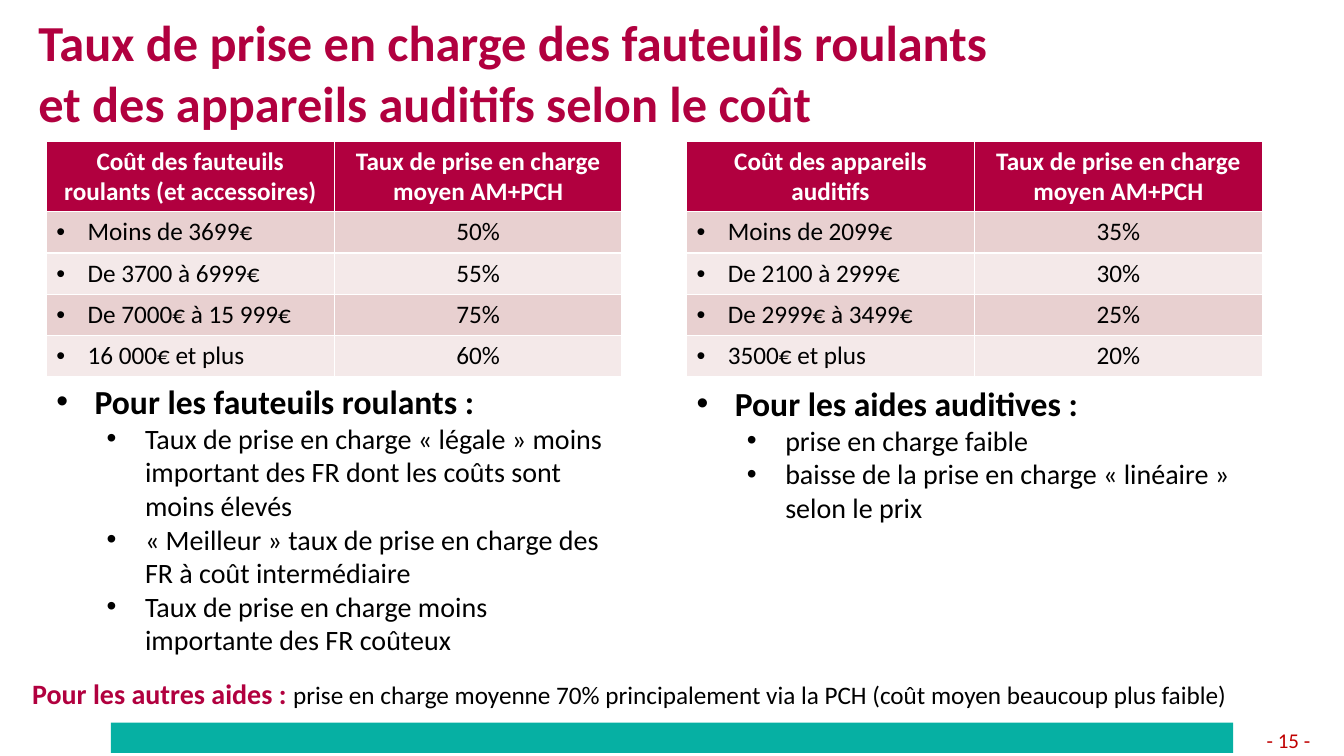
from lxml.etree import SubElement
from pptx import Presentation
from pptx.dml.color import RGBColor as RGB
from pptx.enum.shapes import MSO_SHAPE as SHAPE
from pptx.enum.text import MSO_ANCHOR as ANCHOR, MSO_AUTO_SIZE as AUTO, PP_ALIGN as ALIGN
from pptx.oxml.ns import qn
from pptx.util import Pt

PX = 9144
FONT = "Calibri"
COLORS = {
    "crimson": "B1003F", "teal": "06B0A3", "red": "C00000", "black": "000000",
    "white": "FFFFFF", "band_dark": "E8D0D0", "band_light": "F4E9E9",
}
RATE_HEADER = "Taux de prise en charge moyen AM+PCH"
COLUMNS = [
    {
        "x": 46, "notes_y": 373, "notes_h": 286,
        "rows": [("Coût des fauteuils roulants (et accessoires)", RATE_HEADER),
                 ("Moins de 3699€", "50%"), ("De 3700 à 6999€", "55%"),
                 ("De 7000€ à 15 999€", "75%"), ("16 000€ et plus", "60%")],
        "heading": "Pour les fauteuils roulants :",
        "notes": ["Taux de prise en charge « légale » moins important des FR "
                  "dont les coûts sont moins élevés",
                  "« Meilleur » taux de prise en charge des FR à coût intermédiaire",
                  "Taux de prise en charge moins importante des FR coûteux"],
    },
    {
        "x": 681, "notes_y": 375, "notes_h": 151,
        "rows": [("Coût des appareils auditifs", RATE_HEADER),
                 ("Moins de 2099€", "35%"), ("De 2100 à 2999€", "30%"),
                 ("De 2999€ à 3499€", "25%"), ("3500€ et plus", "20%")],
        "heading": "Pour les aides auditives :",
        "notes": ["prise en charge faible",
                  "baisse de la prise en charge « linéaire » selon le prix"],
    },
]


def emu(*lengths):
    """Convert px lengths to EMU."""
    return [n * PX for n in lengths]


def color(name):
    """Return a named colour."""
    return RGB.from_string(COLORS[name])


def add_run(p, text, size, ink="black", bold=False):
    """Add a formatted run to a paragraph."""
    r = p.add_run()
    r.text = text
    r.font.name, r.font.size, r.font.bold = FONT, Pt(size), bold
    r.font.color.rgb = color(ink)


def set_bullet(p, left, hang):
    """Give a paragraph a round bullet with a hanging indent."""
    pPr = p._p.get_or_add_pPr()
    pPr.set("marL", str(left * PX))
    pPr.set("indent", str(-hang * PX))
    SubElement(pPr, qn("a:buFont")).set("typeface", "Arial")
    SubElement(pPr, qn("a:buChar")).set("char", "•")


def add_text_box(s, x, y, w, h):
    """Add a wrapping text box and return its text frame."""
    tf = s.shapes.add_textbox(*emu(x, y, w, h)).text_frame
    tf.word_wrap = True
    return tf


def add_title(s, lines):
    """Place the title and fill it line by line."""
    title = s.shapes.title
    title.left, title.top, title.width, title.height = emu(28, 6, 1346, 131)
    tf = title.text_frame
    tf.auto_size, tf.vertical_anchor = AUTO.NONE, ANCHOR.MIDDLE
    p = tf.paragraphs[0]
    p.alignment = ALIGN.LEFT
    for i, line in enumerate(lines):
        if i:
            p.add_line_break()
        add_run(p, line, 36, "crimson", True)


def add_rate_table(s, x, rows):
    """Add a table of coverage rates by cost."""
    table = s.shapes.add_table(len(rows), 2, *emu(x, 140, 571, 234)).table
    for i, row in enumerate(rows):
        header = i == 0
        table.rows[i].height = (70 if header else 41) * PX
        fill = "crimson" if header else "band_dark" if i % 2 else "band_light"
        for j, text in enumerate(row):
            cell = table.cell(i, j)
            cell.fill.solid()
            cell.fill.fore_color.rgb = color(fill)
            p = cell.text_frame.paragraphs[0]
            if header or j:
                p.alignment = ALIGN.CENTER
            else:
                set_bullet(p, 31, 31)
            add_run(p, text, 18, "white" if header else "black", header)


def add_notes(s, x, y, h, heading, notes):
    """Add a bold bulleted heading with its sub-points."""
    tf = add_text_box(s, x, y, 571, h)
    p = tf.paragraphs[0]
    set_bullet(p, 38, 38)
    add_run(p, heading, 24, bold=True)
    for note in notes:
        p = tf.add_paragraph()
        p.level = 1
        set_bullet(p, 88, 38)
        add_run(p, note, 20)


def add_footer(s):
    """Add the footer bar and the page number."""
    bar = s.shapes.add_shape(SHAPE.RECTANGLE, *emu(110, 717, 1113, 30))
    bar.shadow.inherit = False
    bar.fill.solid()
    bar.fill.fore_color.rgb = color("teal")
    bar.line.fill.background()
    tf = add_text_box(s, 1223, 717, 110, 35)
    tf.margin_left = tf.margin_right = 4 * PX
    p = tf.paragraphs[0]
    p.alignment = ALIGN.CENTER
    add_run(p, "- 15 -", 15, "red")


def main():
    """Build and save the slide."""
    prs = Presentation()
    prs.slide_width, prs.slide_height = emu(1333, 750)
    s = prs.slides.add_slide(prs.slide_layouts[5])
    add_footer(s)
    add_title(s, ["Taux de prise en charge des fauteuils roulants",
                  "et des appareils auditifs selon le coût"])
    for c in COLUMNS:
        add_rate_table(s, c["x"], c["rows"])
        add_notes(s, c["x"], c["notes_y"], c["notes_h"], c["heading"], c["notes"])
    p = add_text_box(s, 22, 666, 1291, 44).paragraphs[0]
    add_run(p, "Pour les autres aides : ", 20, "crimson", True)
    add_run(p, "prise en charge moyenne 70% principalement via la PCH "
               "(coût moyen beaucoup plus faible)", 18)
    prs.save("out.pptx")


if __name__ == "__main__":
    main()
